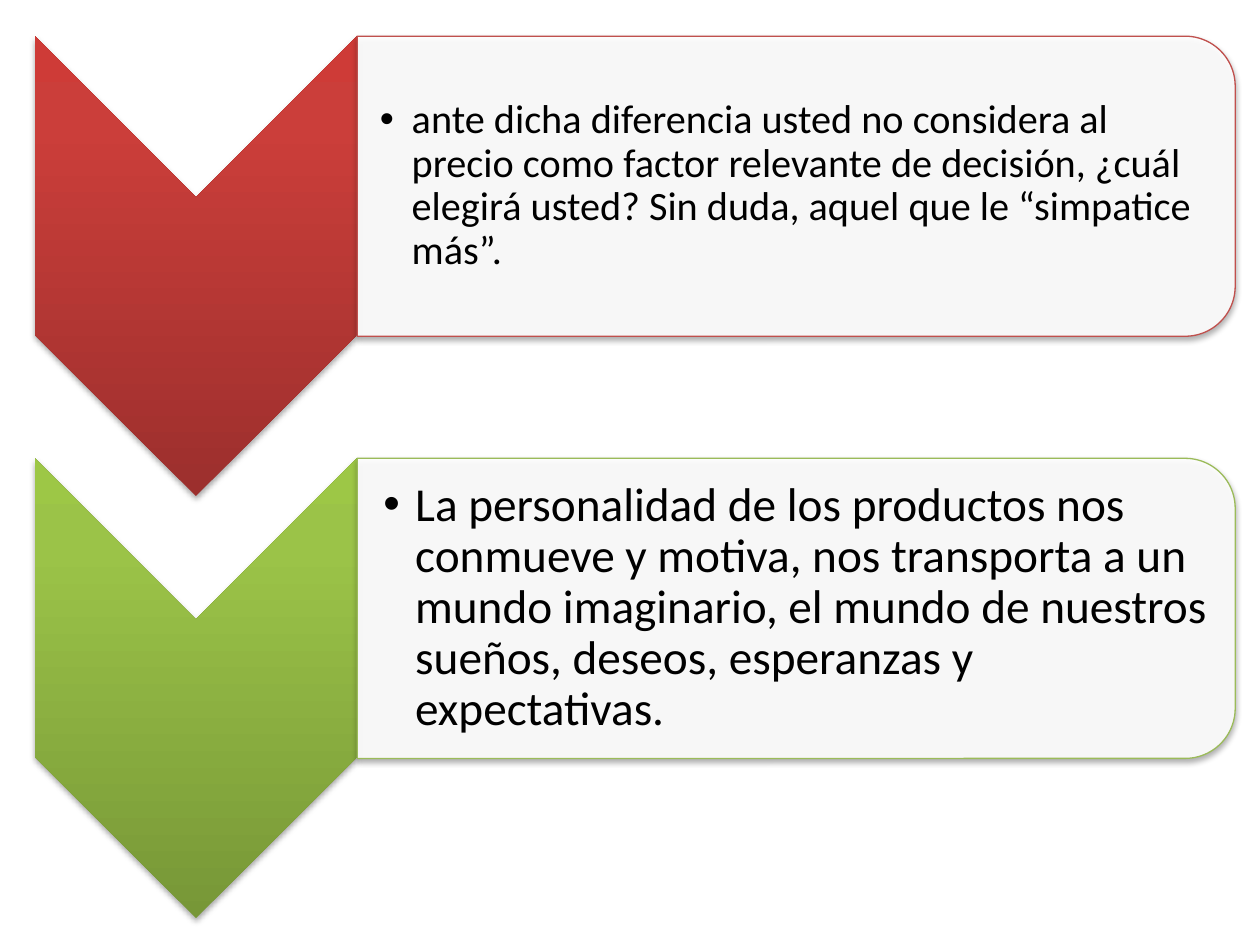
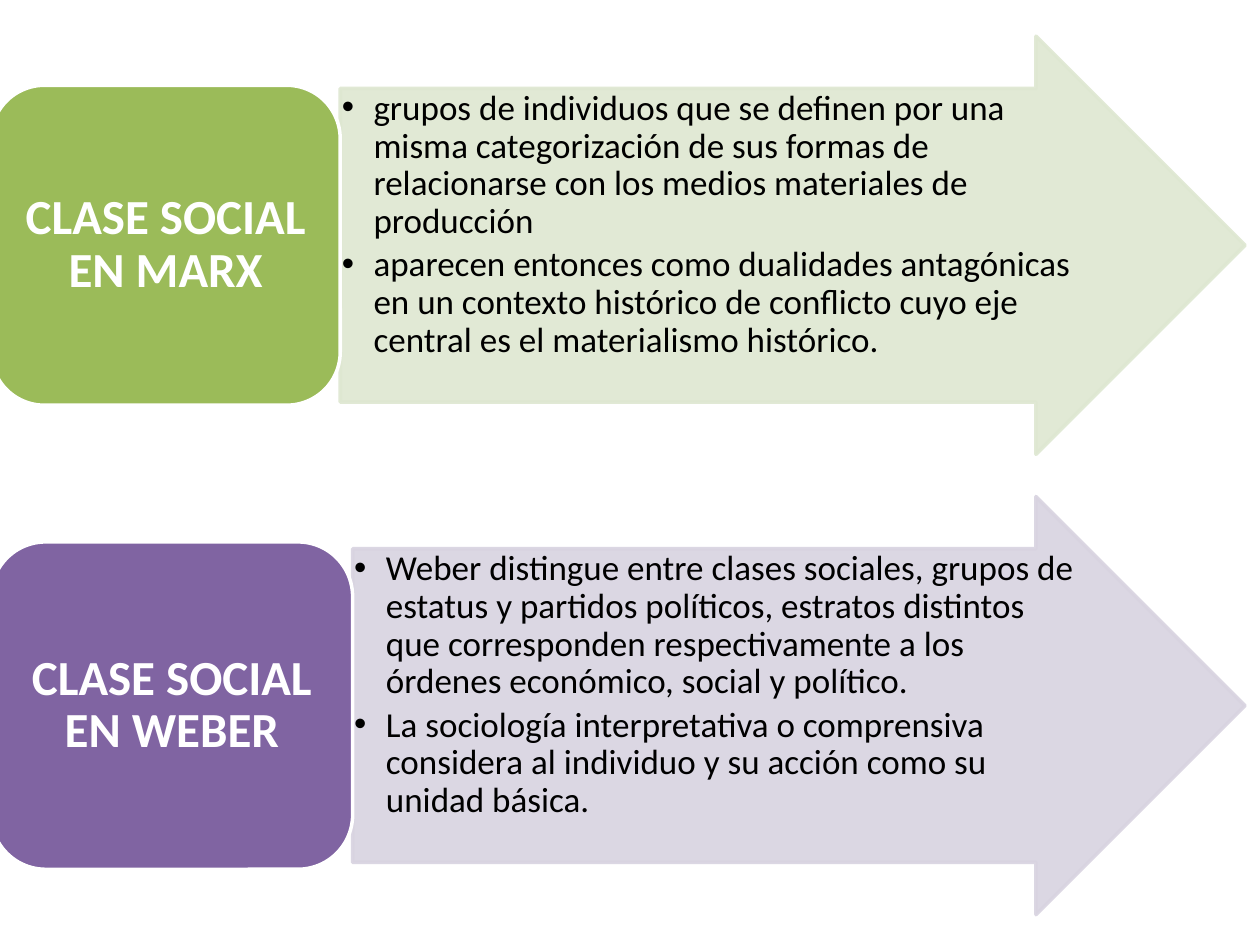
from dataclasses import dataclass

import pptx
import pptx.dml.color
import pptx.enum.shapes
import pptx.enum.text
import pptx.oxml
import pptx.oxml.ns
import pptx.util

Cm = pptx.util.Cm
Pt = pptx.util.Pt
qn = pptx.oxml.ns.qn
SHAPE = pptx.enum.shapes.MSO_SHAPE
ANCHOR = pptx.enum.text.MSO_ANCHOR

FONT = "Calibri"
LINE_SPACING = 0.9
COLORS = {
    "text": "000000",
    "white": "FFFFFF",
    "red": "C0504D",
    "green": "9BBB59",
    "purple": "8064A2",
    "pale green": "DEE7D1",
    "pale purple": "D8D3E0",
}
# Gradient stops: position in percent and colour
GRADIENTS = {
    "red": {0: "9C2F2D", 80: "CB3E3A", 100: "CE3B37"},
    "green": {0: "779737", 80: "9BC348", 100: "9DC746"},
}


@dataclass(frozen=True)
class Frame:
    """Visible position and size in centimetres."""
    left: float
    top: float
    width: float
    height: float


@dataclass(frozen=True)
class ChevronRow:
    color: str
    text: str
    size: int
    inset: float


@dataclass(frozen=True)
class ArrowRow:
    label: str
    color: str
    pale: str
    left: float
    label_height: float
    points: tuple[str, ...]


CHEVRON_ROWS = (
    ChevronRow("red", "ante dicha diferencia usted no considera al precio como factor "
               "relevante de decisión, ¿cuál elegirá usted? Sin duda, aquel que le "
               "“simpatice más”.", 23, 0.46),
    ChevronRow("green", "La personalidad de los productos nos conmueve y motiva, nos "
               "transporta a un mundo imaginario, el mundo de nuestros sueños, deseos, "
               "esperanzas y expectativas.", 27, 0.53),
)
ARROW_ROWS = (
    ArrowRow("CLASE SOCIAL EN MARX", "green", "pale green", 6.86, 6.45, (
        "grupos de individuos que se definen por una misma categorización de sus formas "
        "de relacionarse con los medios materiales de producción",
        "aparecen entonces como dualidades antagónicas en un contexto histórico de "
        "conflicto cuyo eje central es el materialismo histórico.")),
    ArrowRow("CLASE SOCIAL EN WEBER", "purple", "pale purple", 7.11, 6.6, (
        "Weber distingue entre clases sociales, grupos de estatus y partidos políticos, "
        "estratos distintos que corresponden respectivamente a los órdenes económico, "
        "social y político.",
        "La sociología interpretativa o comprensiva considera al individuo y su acción "
        "como su unidad básica.")),
)


# Shared drawing helpers
def rgb(name: str) -> pptx.dml.color.RGBColor:
    return pptx.dml.color.RGBColor.from_string(COLORS[name])


def add_slide(deck):
    """Slide with two list placeholders and no title."""
    page = deck.slides.add_slide(deck.slide_layouts[3])
    title = page.shapes.title.element
    title.getparent().remove(title)
    return page, list(page.placeholders)


def add_box(page, kind, frame: Frame, fill: str, line: str | None = None,
            line_width: float = 0, quarter_turn: bool = False):
    left, top, width, height = frame.left, frame.top, frame.width, frame.height
    if quarter_turn:
        left += (width - height) / 2
        top += (height - width) / 2
        width, height = height, width
    box = page.shapes.add_shape(kind, Cm(left), Cm(top), Cm(width), Cm(height))
    box.rotation = 90 if quarter_turn else 0
    box.shadow.inherit = False
    box.fill.solid()
    box.fill.fore_color.rgb = rgb(fill)
    if line:
        box.line.color.rgb = rgb(line)
        box.line.width = Pt(line_width)
    else:
        box.line.fill.background()
    return box


def set_opacity(properties, percent: int) -> None:
    """Apply opacity to the solid fill directly inside properties."""
    color = properties.find(qn("a:solidFill")).find(qn("a:srgbClr"))
    alpha = color.makeelement(qn("a:alpha"), {"val": str(percent * 1000)})
    color.append(alpha)


def set_gradient(box, stops: dict[int, str]) -> None:
    stop_xml = "".join(f'<a:gs pos="{position * 1000}"><a:srgbClr val="{color}"/></a:gs>'
                       for position, color in stops.items())
    gradient = pptx.oxml.parse_xml(
        f'<a:gradFill {pptx.oxml.ns.nsdecls("a")} rotWithShape="0">'
        f'<a:gsLst>{stop_xml}</a:gsLst><a:lin ang="16200000" scaled="0"/></a:gradFill>')
    properties = box.element.spPr
    properties.replace(properties.find(qn("a:solidFill")), gradient)


def add_shadow(box) -> None:
    shadow = pptx.oxml.parse_xml(
        f'<a:outerShdw {pptx.oxml.ns.nsdecls("a")} blurRad="40000" dist="23000" '
        'dir="5400000" rotWithShape="0"><a:srgbClr val="000000">'
        '<a:alpha val="35000"/></a:srgbClr></a:outerShdw>')
    box.element.spPr.find(qn("a:effectLst")).append(shadow)


def format_frame(frame, anchor, insets: tuple[float, float, float, float]) -> None:
    frame.word_wrap = True
    frame.auto_size = pptx.enum.text.MSO_AUTO_SIZE.NONE
    frame.vertical_anchor = anchor
    (frame.margin_left, frame.margin_top,
     frame.margin_right, frame.margin_bottom) = map(Cm, insets)


def format_para(para, size: int, color: str, bold: bool = False) -> None:
    para.line_spacing = LINE_SPACING
    para.space_before = Pt(0)
    for span in para.runs:
        span.font.name = FONT
        span.font.size = Pt(size)
        span.font.bold = bold
        span.font.color.rgb = rgb(color)


def place_list(holder, frame: Frame, points: tuple[str, ...], size: int, anchor,
               insets: tuple[float, float, float, float]) -> None:
    """Move a list placeholder in front of the shapes drawn so far and fill it."""
    holder.element.getparent().append(holder.element)
    holder.left, holder.top = Cm(frame.left), Cm(frame.top)
    holder.width, holder.height = Cm(frame.width), Cm(frame.height)
    holder.text_frame.text = "\n".join(points)
    format_frame(holder.text_frame, anchor, insets)
    for para in holder.text_frame.paragraphs:
        properties = para._p.get_or_add_pPr()
        properties.set("marL", str(Cm(0.64)))
        properties.set("indent", str(Cm(-0.64)))
        properties.append(properties.makeelement(qn("a:buChar"), {"char": "•"}))
        format_para(para, size, "text")
        para.space_after = Pt(size * 0.15)


# Slide 1: chevrons with rounded panels
def build_chevron_slide(deck) -> None:
    page, holders = add_slide(deck)
    row_step = 8.51
    for index, (row, holder) in enumerate(zip(CHEVRON_ROWS, holders)):
        top = 0.73 + index * row_step
        chevron = add_box(page, SHAPE.CHEVRON, Frame(0.7, top, 6.5, 9.27), row.color,
                          quarter_turn=True)
        set_gradient(chevron, GRADIENTS[row.color])
        add_shadow(chevron)
        panel = add_box(page, SHAPE.ROUND_2_SAME_RECTANGLE, Frame(7.2, top, 17.7, 6.05),
                        "white", row.color, 0.75, quarter_turn=True)
        set_opacity(panel.element.spPr, 90)
        add_shadow(panel)
        place_list(holder, Frame(7.2, top + 0.3, 17.4, 5.44), (row.text,), row.size,
                   ANCHOR.MIDDLE, (row.inset, 0.05, 0.05, 0.05))


# Slide 2: labelled arrows
def build_arrow_slide(deck) -> None:
    page, holders = add_slide(deck)
    row_step, arrow_height, arrow_right, list_right = 9.28, 8.43, 25.1, 21.92
    label_left, shaft = -0.18, 0.75
    for index, (row, holder) in enumerate(zip(ARROW_ROWS, holders)):
        top = 0.73 + index * row_step
        middle = top + arrow_height / 2
        arrow = add_box(page, SHAPE.RIGHT_ARROW,
                        Frame(row.left, top, arrow_right - row.left, arrow_height),
                        row.pale, row.pale, 2)
        arrow.adjustments[0], arrow.adjustments[1] = shaft, 0.5
        set_opacity(arrow.element.spPr, 90)
        set_opacity(arrow.element.spPr.find(qn("a:ln")), 90)
        list_height = arrow_height * shaft
        place_list(holder, Frame(row.left, middle - list_height / 2,
                                 list_right - row.left, list_height),
                   row.points, 20, ANCHOR.TOP, (0.03, 0.03, 0.03, 0.03))

        label = add_box(page, SHAPE.ROUNDED_RECTANGLE,
                        Frame(label_left, middle - row.label_height / 2,
                              row.left - label_left, row.label_height),
                        row.color, "white", 2)
        label.text_frame.text = row.label
        format_frame(label.text_frame, ANCHOR.MIDDLE, (0.3, 0.15, 0.3, 0.15))
        para = label.text_frame.paragraphs[0]
        para.alignment = pptx.enum.text.PP_ALIGN.CENTER
        format_para(para, 28, "white", bold=True)


def main() -> None:
    deck = pptx.Presentation()
    deck.slide_width, deck.slide_height = Cm(25.4), Cm(19.05)
    build_chevron_slide(deck)
    build_arrow_slide(deck)
    deck.save("out.pptx")


if __name__ == "__main__":
    main()
